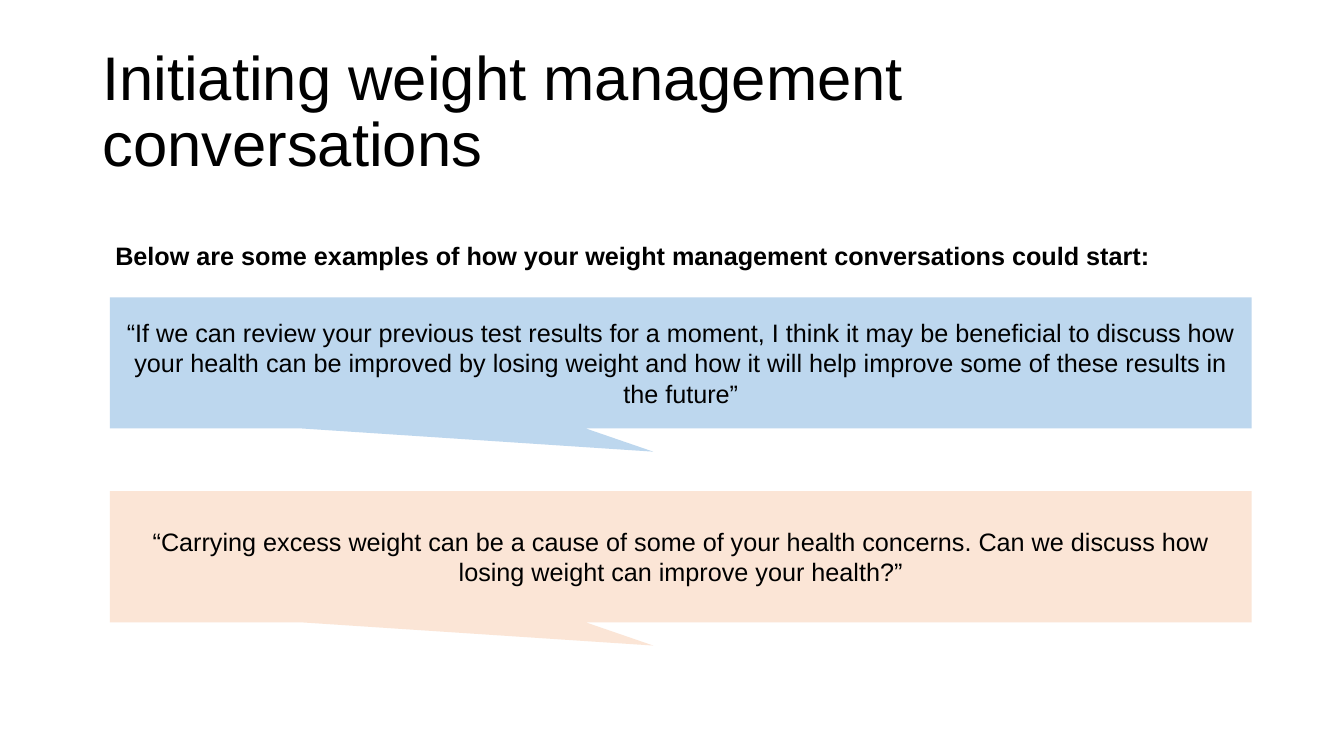
from dataclasses import dataclass

from pptx import Presentation
from pptx.dml.color import RGBColor
from pptx.enum.shapes import MSO_SHAPE as Shape
from pptx.enum.text import MSO_ANCHOR as Anchor, PP_ALIGN as Align
from pptx.util import Pt


@dataclass(frozen=True)
class Theme:
    font: str = "Arial"
    ink: str = "000000"
    blue: str = "BDD7EE"
    peach: str = "FBE5D6"
    title_size: int = 44
    body_size: int = 18


@dataclass(frozen=True)
class Box:
    left: float
    top: float
    width: float
    height: float

    def lengths(self):
        return [Pt(n) for n in (self.left, self.top, self.width, self.height)]


THEME = Theme()
BLANK_LAYOUT = 6
CALLOUT_HEIGHT = 93.6
CALLOUT_STEP = 138.5
TAIL_TIP = (-0.024, 0.678)

TITLE = "Initiating weight management conversations"
INTRO = "Below are some examples of how your weight management conversations could start:"
EXAMPLES = [
    ("“If we can review your previous test results for a moment, I think it may be "
     "beneficial to discuss how your health can be improved by losing weight and how "
     "it will help improve some of these results in the future”", THEME.blue),
    ("“Carrying excess weight can be a cause of some of your health concerns. "
     "Can we discuss how losing weight can improve your health?”", THEME.peach),
]


def write(shape, text, size, bold=False, align=Align.LEFT, anchor=Anchor.TOP, spacing=1.0):
    frame = shape.text_frame
    frame.word_wrap = True
    frame.vertical_anchor = anchor
    para = frame.paragraphs[0]
    para.alignment = align
    para.line_spacing = spacing
    run = para.add_run()
    run.text = text
    run.font.name = THEME.font
    run.font.size = Pt(size)
    run.font.bold = bold
    run.font.color.rgb = RGBColor.from_string(THEME.ink)


def add_title(page, box):
    title = page.shapes.add_textbox(*box.lengths())
    write(title, TITLE, THEME.title_size, anchor=Anchor.MIDDLE, spacing=0.9)


def add_intro(page, box):
    intro = page.shapes.add_textbox(*box.lengths())
    write(intro, INTRO, THEME.body_size, bold=True)


def add_callout(page, box, text, fill):
    callout = page.shapes.add_shape(Shape.RECTANGULAR_CALLOUT, *box.lengths())
    callout.shadow.inherit = False
    callout.fill.solid()
    callout.fill.fore_color.rgb = RGBColor.from_string(fill)
    callout.line.fill.background()
    for index, offset in enumerate(TAIL_TIP):
        callout.adjustments[index] = offset
    write(callout, text, THEME.body_size, align=Align.CENTER, anchor=Anchor.MIDDLE)


def add_examples(page, box):
    """Stack one callout per example from the top of the box."""
    for index, (text, fill) in enumerate(EXAMPLES):
        top = box.top + index * CALLOUT_STEP
        add_callout(page, Box(box.left, top, box.width, CALLOUT_HEIGHT), text, fill)


def main():
    deck = Presentation()
    deck.slide_width, deck.slide_height = Pt(960), Pt(540)
    page = deck.slides.add_slide(deck.slide_layouts[BLANK_LAYOUT])
    add_title(page, Box(66, 28.75, 828, 104.4))
    add_intro(page, Box(75.3, 168, 818.7, 29))
    add_examples(page, Box(78.4, 212.4, 815.6, CALLOUT_STEP + CALLOUT_HEIGHT))
    deck.save("out.pptx")


if __name__ == "__main__":
    main()
